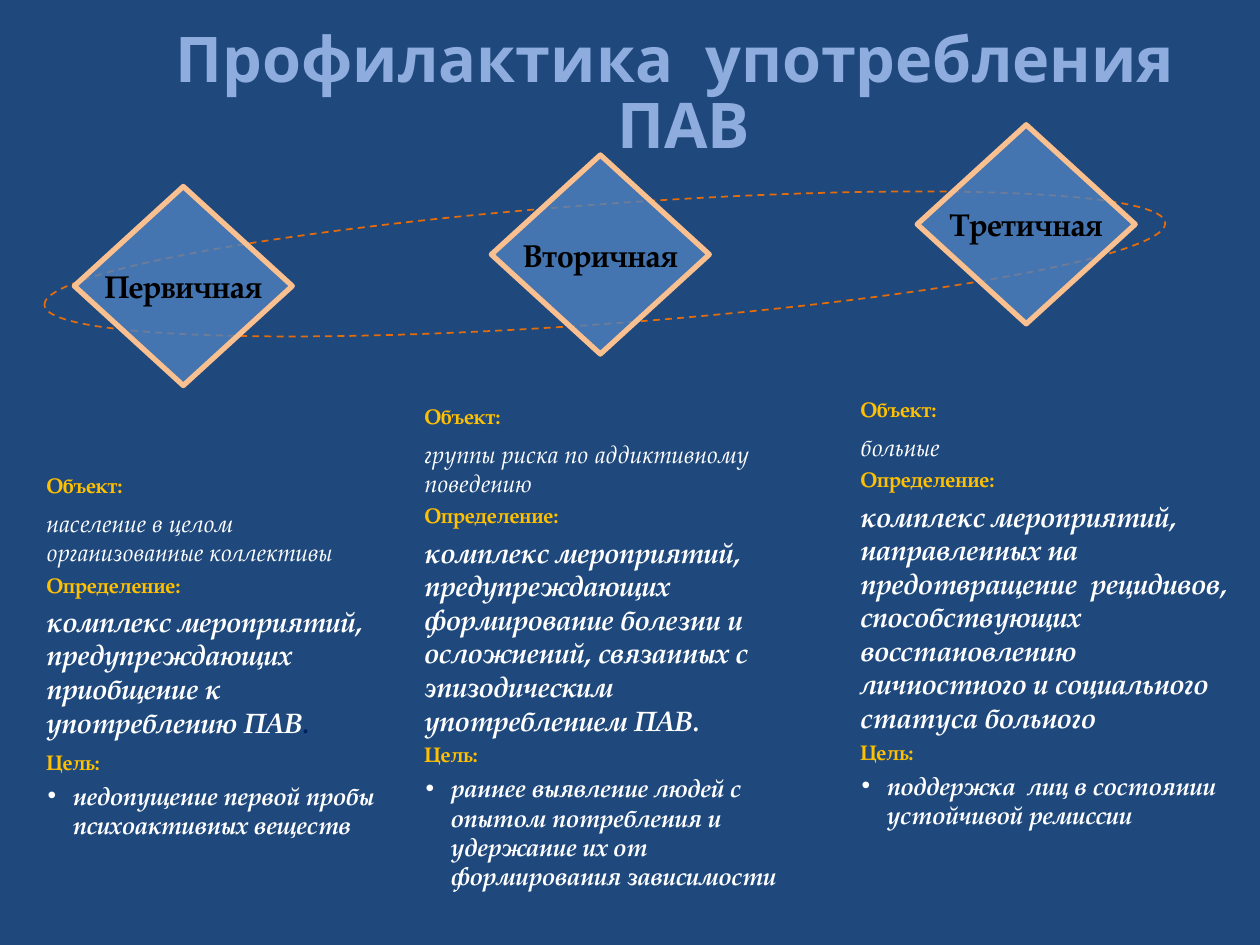
from lxml import etree
from pptx import Presentation
from pptx.dml.color import RGBColor
from pptx.enum.dml import MSO_LINE
from pptx.enum.shapes import MSO_SHAPE as SHAPE
from pptx.enum.text import MSO_ANCHOR as ANCHOR, MSO_AUTO_SIZE as AUTO, PP_ALIGN as ALIGN
from pptx.oxml.ns import qn
from pptx.util import Inches, Pt

SERIF = "TeX Gyre Pagella"
GOLD, WHITE = "FFC000", "FFFFFF"


def color(hex_code):
    return RGBColor.from_string(hex_code)


def style(font, name, size, hex_code, bold=True, italic=False):
    font.name = name
    font.size = Pt(size)
    font.color.rgb = color(hex_code)
    font.bold = bold
    font.italic = italic


prs = Presentation()
prs.slide_width, prs.slide_height = Inches(10), Inches(7.5)
slide = prs.slides.add_slide(prs.slide_layouts[5])
slide.background.fill.solid()
slide.background.fill.fore_color.rgb = color("1F497D")

title = slide.shapes.title
title.left, title.top = Inches(1.09), Inches(0.47)
title.width, title.height = Inches(8.67), Inches(0.58)
heading = title.text_frame
heading.text = "Профилактика  употребления  ПАВ"
heading.auto_size = AUTO.NONE
heading.vertical_anchor = ANCHOR.MIDDLE
heading.paragraphs[0].alignment = ALIGN.CENTER
heading.paragraphs[0].line_spacing = 0.88
style(heading.paragraphs[0].runs[0].font, "Open Sans", 36, "8FACDE")

orbit = slide.shapes.add_shape(SHAPE.OVAL, Inches(0.34), Inches(1.62), Inches(8.92), Inches(0.95))
orbit.rotation = 355.8
orbit.shadow.inherit = False
orbit.fill.background()
orbit.line.color.rgb = color("E46C0A")
orbit.line.width = Pt(1)
orbit.line.dash_style = MSO_LINE.DASH

stages = [("Первичная", 0.59, 1.48), ("Вторичная", 3.9, 1.23), ("Третичная", 7.28, 0.99)]
for stage, left, top in stages:
    diamond = slide.shapes.add_shape(SHAPE.DIAMOND, Inches(left), Inches(top), Inches(1.73), Inches(1.58))
    diamond.shadow.inherit = False
    diamond.fill.solid()
    diamond.fill.fore_color.rgb = color("4F81BD")
    tint = diamond._element.spPr.find(qn("a:solidFill"))[0]
    etree.SubElement(tint, qn("a:alpha")).set("val", "80000")
    diamond.line.color.rgb = color("FAC090")
    diamond.line.width = Pt(3)
    label = diamond.text_frame
    label.text = stage
    label.word_wrap = False
    label.vertical_anchor = ANCHOR.MIDDLE
    label.paragraphs[0].alignment = ALIGN.CENTER
    style(label.paragraphs[0].runs[0].font, SERIF, 18, "000000")

columns = [
    ((0.27, 3.55, 2.91, 3.31), ["население в целом", "организованные коллективы"],
     "комплекс мероприятий, предупреждающих приобщение к употреблению ПАВ", ".", 6,
     "недопущение первой пробы психоактивных веществ"),
    ((3.27, 3.11, 3.31, 4.05), ["группы риска по аддиктивному поведению"],
     "комплекс мероприятий, предупреждающих формирование болезни и осложнений, "
     "связанных с эпизодическим употреблением ПАВ.", "", 3,
     "раннее выявление людей с опытом потребления и удержание их от формирования зависимости"),
    ((6.73, 2.81, 3.15, 4.11), ["больные"],
     "комплекс мероприятий, направленных на предотвращение  рецидивов, способствующих "
     "восстановлению личностного и социального статуса больного", "", 3,
     "поддержка  лиц в состоянии устойчивой ремиссии"),
]
for place, audience, definition, full_stop, goal_gap, goal in columns:
    box = slide.shapes.add_textbox(*[Inches(length) for length in place])
    details = box.text_frame
    details.word_wrap = True
    details.auto_size = AUTO.SHAPE_TO_FIT_TEXT
    details.vertical_anchor = ANCHOR.MIDDLE

    rows = [("Объект:", 0, 12, GOLD, True, False)]
    rows += [(group, 0 if i else 6, 14, WHITE, False, True) for i, group in enumerate(audience)]
    rows += [
        ("Определение:", 3, 12, GOLD, True, False),
        (definition, 4, 16, WHITE, True, True),
        ("Цель:", goal_gap, 12, GOLD, True, False),
        (goal, 3.5, 14, WHITE, True, True),
    ]
    for i, (text, gap, size, hex_code, bold, italic) in enumerate(rows):
        paragraph = details.add_paragraph() if i else details.paragraphs[0]
        paragraph.text = text
        if gap:
            paragraph.space_before = Pt(gap)
        style(paragraph.runs[0].font, SERIF, size, hex_code, bold, italic)
        if text == definition and full_stop:
            ending = paragraph.add_run()
            ending.text = full_stop
            style(ending.font, SERIF, size, "002060", bold, italic)
        if text == goal:
            paragraph.level = 1
            props = paragraph._p.get_or_add_pPr()
            props.set("marL", str(Inches(0.21)))
            props.set("indent", str(Inches(-0.2)))
            etree.SubElement(props, qn("a:buFont")).set("typeface", "Arial")
            etree.SubElement(props, qn("a:buChar")).set("char", "•")

prs.save("out.pptx")
